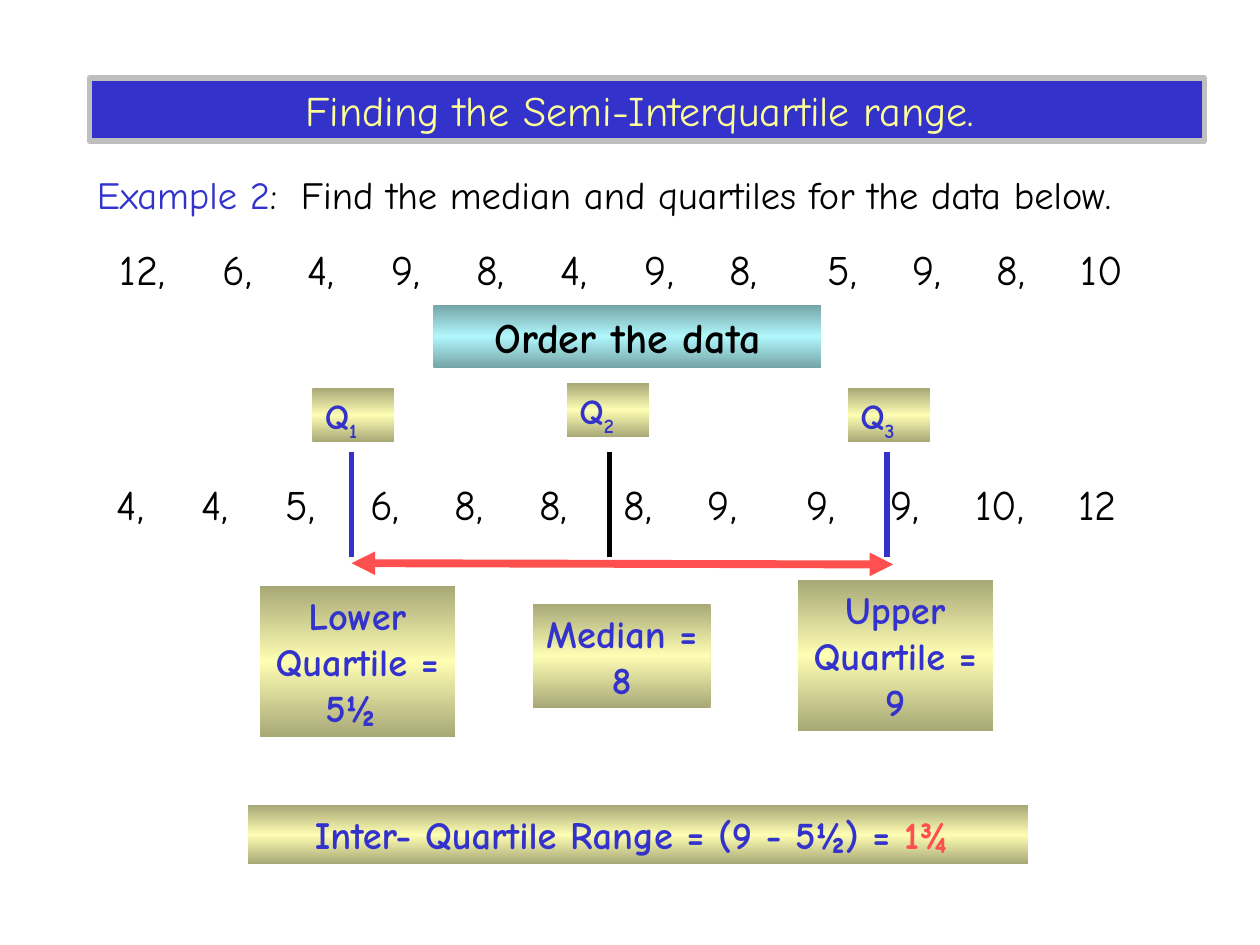
import pptx
import pptx.util
import pptx.dml.color
import pptx.enum.shapes
import pptx.enum.text
import pptx.oxml
import pptx.oxml.ns
import lxml.etree

Inches, Pt = pptx.util.Inches, pptx.util.Pt
RGBColor = pptx.dml.color.RGBColor
ALIGN = pptx.enum.text.PP_ALIGN
qn = pptx.oxml.ns.qn

FONT = "Comic Neue"
BLACK = RGBColor(0x00, 0x00, 0x00)
BLUE = RGBColor(0x33, 0x33, 0xCC)
RED = RGBColor(0xFF, 0x50, 0x50)
CREAM = RGBColor(0xFF, 0xFF, 0x99)
GREY = RGBColor(0xBF, 0xBF, 0xBF)
GOLD = (RGBColor(0xA8, 0xA8, 0x77), RGBColor(0xFD, 0xFD, 0xB3))
AQUA = (RGBColor(0x75, 0xA4, 0xA7), RGBColor(0xB0, 0xF7, 0xFC))

deck = pptx.Presentation()
deck.slide_width, deck.slide_height = Inches(10), Inches(7.5)
slide = deck.slides.add_slide(deck.slide_layouts[6])


def add_box(shapes, at, runs, size, color, fill=None, bold=False, align=ALIGN.CENTER, tabs=()):
    """Add text runs in a box; a pair of fill colours gives edge and middle of a vertical gradient."""
    place = [Inches(n) for n in at]
    if fill is None:
        box = shapes.add_textbox(*place)
    else:
        box = shapes.add_shape(pptx.enum.shapes.MSO_SHAPE.RECTANGLE, *place)
        box.shadow.inherit = False
        box.line.fill.background()
    if isinstance(fill, RGBColor):
        box.fill.solid()
        box.fill.fore_color.rgb = fill
    elif fill:
        box.fill.gradient()
        box.fill.gradient_angle = 270
        stops = box._element.spPr.find(qn("a:gradFill")).find(qn("a:gsLst"))
        for old in list(stops):
            stops.remove(old)
        edge, middle = fill
        for pos, tone in ((0, edge), (50000, middle), (100000, edge)):
            stop = lxml.etree.SubElement(stops, qn("a:gs"), pos=str(pos))
            lxml.etree.SubElement(stop, qn("a:srgbClr"), val=str(tone))
    frame = box.text_frame
    frame.word_wrap = True
    frame.auto_size = pptx.enum.text.MSO_AUTO_SIZE.SHAPE_TO_FIT_TEXT
    frame.vertical_anchor = pptx.enum.text.MSO_ANCHOR.TOP
    para = frame.paragraphs[0]
    para.alignment = align
    if tabs:
        row = lxml.etree.SubElement(para._p.get_or_add_pPr(), qn("a:tabLst"))
        for tab in tabs:
            lxml.etree.SubElement(row, qn("a:tab"), pos=str(Inches(tab)), algn="l")
    para.font.name, para.font.size, para.font.bold = FONT, Pt(size), bold
    para.font.color.rgb = color
    for words in runs:
        para.add_run().text = words
    return box


def add_line(shapes, start, end, color, width):
    line = shapes.add_connector(pptx.enum.shapes.MSO_CONNECTOR.STRAIGHT,
                                *[Inches(n) for n in start + end])
    line.line.color.rgb = color
    line.line.width = Pt(width)
    lxml.etree.SubElement(line._element.spPr, qn("a:effectLst"))
    return line


# Data rows: even steps, wider after a two-digit value and in the middle of the list
rows = (
    (0.85, 1.88, [12, 6, 4, 9, 8, 4, 9, 8, 5, 9, 8, 10]),
    (0.83, 3.75, [4, 4, 5, 6, 8, 8, 8, 9, 9, 9, 10, 12]),
)
for left, top, data in rows:
    tabs, pos = [], 0
    for place, value in enumerate(data[:-1]):
        pos += 0.67 + (0.15 if value > 9 else 0) + (0.11 if place == 7 else 0)
        tabs.append(pos)
    add_box(slide.shapes, (left, top, 8.75, 0.5), [",\t".join(map(str, data))],
            24, BLACK, align=ALIGN.LEFT, tabs=tabs)

add_box(slide.shapes, (3.44, 2.42, 3.08, 0.5), ["Order the data"], 24, BLACK, AQUA, True)

span = add_line(slide.shapes, (2.79, 4.47), (7.09, 4.48), RED, 4.5)
for end in ("headEnd", "tailEnd"):
    lxml.etree.SubElement(span.line._get_or_add_ln(), qn("a:" + end), type="triangle")

result = add_box(slide.shapes, (1.97, 6.39, 6.19, 0.47),
                 ["Inter- Quartile Range = (9 - 5½) = ", "1¾ "], 22, BLUE, GOLD, True)
result.text_frame.paragraphs[0].runs[1].font.color.rgb = RED

task = add_box(slide.shapes, (0.67, 1.31, 9.02, 0.47),
               ["Example 2", ":\tFind the median and quartiles for the data below."],
               22, BLACK, align=ALIGN.LEFT, tabs=[1.62])
task.text_frame.paragraphs[0].runs[0].font.color.rgb = BLUE

# Each quartile: marker line, value box, Q label
marks = (
    ("1", 2.79, BLUE, (2.06, 4.65, 1.55, 1.2), "Lower Quartile = 5½ ", (2.48, 3.08)),
    ("3", 7.04, BLUE, (6.33, 4.6, 1.55, 1.2), "Upper Quartile = 9", (6.73, 3.08)),
    ("2", 4.84, BLACK, (4.23, 4.79, 1.41, 0.83), "Median = 8", (4.5, 3.04)),
)
for digit, x, color, at, words, corner in marks:
    group = slide.shapes.add_group_shape().shapes
    add_line(group, (x, 3.59), (x, 4.42), color, 3)
    add_box(group, at, [words], 22, BLUE, GOLD, True)
    label = add_box(group, corner + (0.65, 0.43), ["Q", digit], 20, BLUE, GOLD, True, ALIGN.LEFT)
    small = label.text_frame.paragraphs[0].runs[1]
    small.font._element.set("baseline", "-25000")

title = add_box(slide.shapes, (0.71, 0.62, 8.85, 0.5),
                ["Finding the Semi-Interquartile range. "], 24, CREAM, BLUE)
title.line.color.rgb = GREY
title.line.width = Pt(3)

deck.save("out.pptx")
